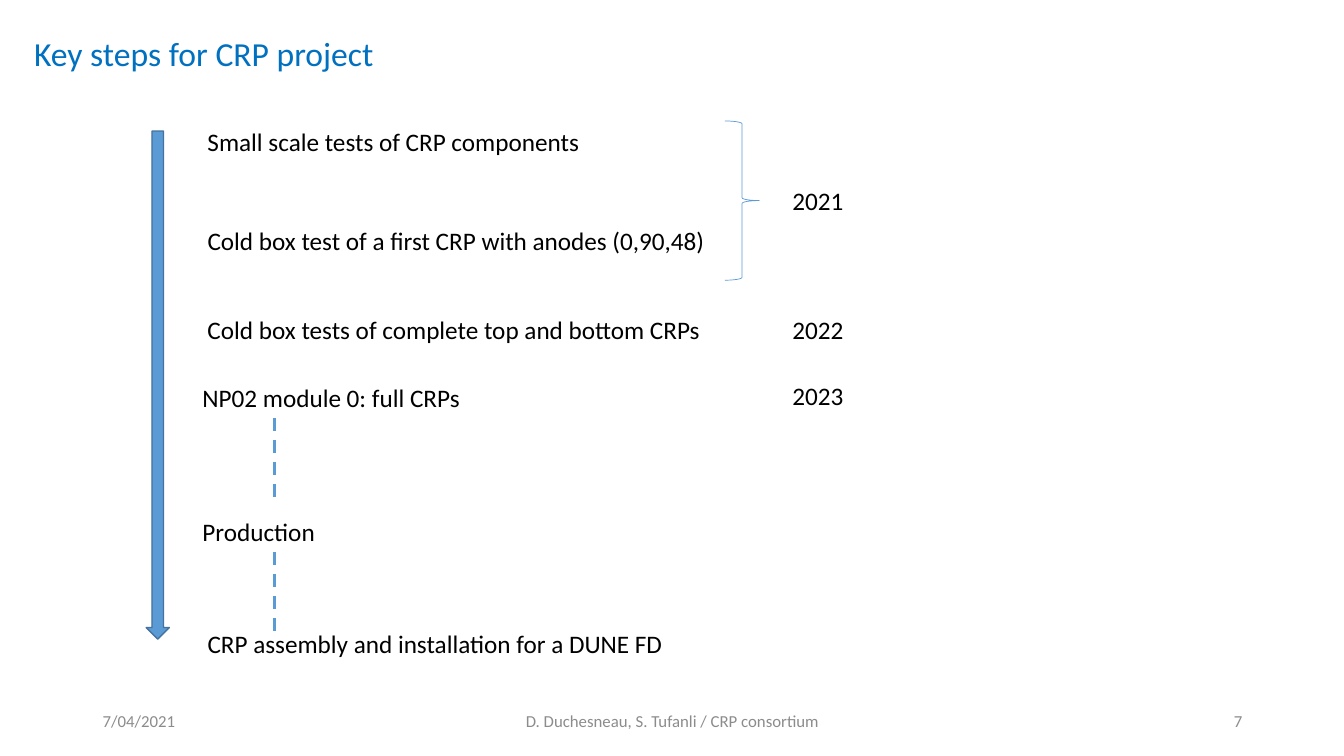
from dataclasses import dataclass

from lxml import etree
from pptx import Presentation
from pptx.dml.color import RGBColor
from pptx.enum.dml import MSO_LINE
from pptx.enum.shapes import MSO_CONNECTOR, MSO_SHAPE
from pptx.enum.text import MSO_ANCHOR, MSO_AUTO_SIZE, PP_ALIGN
from pptx.oxml.ns import qn
from pptx.util import Inches, Pt

LEFT, CENTER, RIGHT = PP_ALIGN.LEFT, PP_ALIGN.CENTER, PP_ALIGN.RIGHT
TOP, MIDDLE = MSO_ANCHOR.TOP, MSO_ANCHOR.MIDDLE
FIT, FIXED = MSO_AUTO_SIZE.SHAPE_TO_FIT_TEXT, MSO_AUTO_SIZE.NONE
ARROW, BRACE = MSO_SHAPE.DOWN_ARROW, MSO_SHAPE.RIGHT_BRACE
STRAIGHT, DASH = MSO_CONNECTOR.STRAIGHT, MSO_LINE.DASH


@dataclass(frozen=True)
class Theme:
    """Colours, font and type sizes of the slide."""

    font: str = "Calibri"
    title: str = "0070C0"
    ink: str = "000000"
    muted: str = "8C8C8C"
    blue: str = "5B9BD5"
    edge: str = "43739E"
    head: int = 24
    body: int = 18
    foot: int = 12


THEME = Theme()

STEPS = (
    ("Small scale tests of CRP components", 1.96, 1.2, 3.93),
    ("Cold box test of a first CRP with anodes (0,90,48)", 1.96, 2.19, 5.19),
    ("Cold box tests of complete top and bottom CRPs", 1.96, 3.07, 5.17),
    ("NP02 module 0: full CRPs", 1.91, 3.74, 2.79),
    ("Production", 1.91, 5.07, 1.33),
    ("CRP assembly and installation for a DUNE FD", 1.96, 6.18, 4.92),
)
YEARS = (("2021", 1.79), ("2022", 3.07), ("2023", 3.72))
FOOTER = (
    ("7/04/2021", 0.92, 3, LEFT),
    ("D. Duchesneau, S. Tufanli / CRP consortium", 4.42, 4.5, CENTER),
    ("7", 9.42, 3, RIGHT),
)


def add_text(slide, text, left, top, width, height=0.4, *, size=THEME.body,
             color=THEME.ink, align=LEFT, anchor=TOP, wrap=False):
    """Add one line of text in the theme font."""
    box = slide.shapes.add_textbox(*map(Inches, (left, top, width, height)))
    frame = box.text_frame
    frame.word_wrap = wrap
    frame.auto_size = FIXED if wrap else FIT
    frame.vertical_anchor = anchor
    para = frame.paragraphs[0]
    para.alignment = align
    run = para.add_run()
    run.text = text
    run.font.name = THEME.font
    run.font.size = Pt(size)
    run.font.color.rgb = RGBColor.from_string(color)


def set_line(line, color, weight):
    """Set the colour and weight of a line."""
    line.color.rgb = RGBColor.from_string(color)
    line.width = Pt(weight)


def add_form(slide, kind, left, top, width, height, line, weight, fill=None):
    """Add a preset shape, unfilled if no fill is given."""
    form = slide.shapes.add_shape(kind, *map(Inches, (left, top, width, height)))
    form.shadow.inherit = False
    if fill:
        form.fill.solid()
        form.fill.fore_color.rgb = RGBColor.from_string(fill)
    else:
        form.fill.background()
    set_line(form.line, line, weight)


def add_dash(slide, left, top, length):
    """Add a vertical dashed line."""
    ends = map(Inches, (left, top, left, top + length))
    dash = slide.shapes.add_connector(STRAIGHT, *ends)
    set_line(dash.line, THEME.blue, 2.25)
    dash.line.dash_style = DASH
    etree.SubElement(dash._element.spPr, qn("a:effectLst"))


def main():
    """Build and save the slide."""
    deck = Presentation()
    deck.slide_width, deck.slide_height = Inches(13.33), Inches(7.5)
    slide = deck.slides.add_slide(deck.slide_layouts[6])

    add_text(slide, "Key steps for CRP project", 0.24, 0.28, 3.6, 0.5,
             size=THEME.head, color=THEME.title)
    add_form(slide, ARROW, 1.45, 1.3, 0.23, 5.04, THEME.edge, 1, THEME.blue)
    add_form(slide, BRACE, 7.19, 1.2, 0.34, 1.58, THEME.blue, 0.5)
    for text, left, top, width in STEPS:
        add_text(slide, text, left, top, width)
    for year, top in YEARS:
        add_text(slide, year, 7.76, top, 0.71)
    for top in (4.15, 5.48):
        add_dash(slide, 2.72, top, 0.79)
    for text, left, width, align in FOOTER:
        add_text(slide, text, left, 6.95, width, size=THEME.foot,
                 color=THEME.muted, align=align, anchor=MIDDLE, wrap=True)

    deck.save("out.pptx")


if __name__ == "__main__":
    main()
